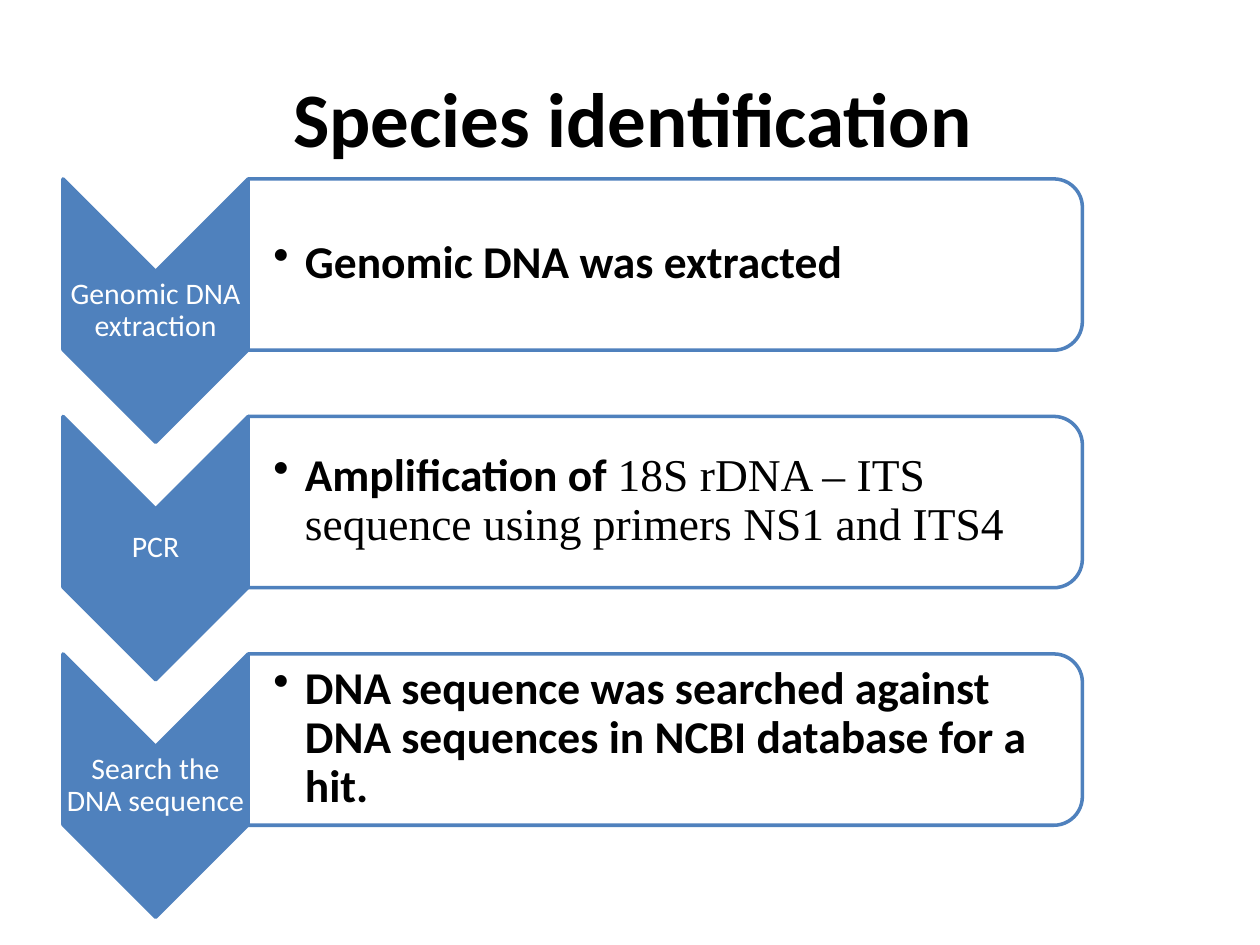
from lxml.etree import SubElement
from pptx import Presentation
from pptx.dml.color import RGBColor
from pptx.enum.shapes import MSO_SHAPE as Shape
from pptx.enum.text import MSO_ANCHOR as Anchor, PP_ALIGN as Align
from pptx.oxml.ns import qn
from pptx.util import Inches, Pt

BLUE, WHITE, BLACK = "4F81BD", "FFFFFF", "000000"
SANS, SERIF = "Calibri", "Times New Roman"

deck = Presentation()
deck.slide_width, deck.slide_height = Inches(10), Inches(7.5)
slide = deck.slides.add_slide(deck.slide_layouts[6])


def add_turned(kind, left, top, width, height, fill):
    shape = slide.shapes.add_shape(
        kind,
        Inches(left + (width - height) / 2),
        Inches(top + (height - width) / 2),
        Inches(height),
        Inches(width),
    )
    shape.rotation = 90
    shape.shadow.inherit = False
    shape.fill.solid()
    shape.fill.fore_color.rgb = RGBColor.from_string(fill)
    shape.line.color.rgb = RGBColor.from_string(BLUE)
    shape.line.width = Pt(2)
    return shape


def add_text(left, top, width, height, insets, runs, size, color, align):
    frame = slide.shapes.add_textbox(
        Inches(left), Inches(top), Inches(width), Inches(height)
    ).text_frame
    frame.word_wrap = True
    frame.vertical_anchor = Anchor.MIDDLE
    frame.margin_left = Inches(insets[0])
    frame.margin_top = frame.margin_right = frame.margin_bottom = Inches(insets[1])
    paragraph = frame.paragraphs[0]
    paragraph.alignment = align
    for words, face, bold in runs:
        run = paragraph.add_run()
        run.text = words
        run.font.name = face
        run.font.size = Pt(size)
        run.font.bold = bold
        run.font.color.rgb = RGBColor.from_string(color)
    return paragraph


add_text(0.5, 0.3, 9, 1.25, (0.1, 0.05), [("Species identification", SANS, True)],
         44, BLACK, Align.CENTER)

steps = [
    ("Genomic DNA extraction", [("Genomic DNA was extracted", SANS, True)]),
    ("PCR", [
        ("Amplification of ", SANS, True),
        ("18S rDNA – ITS sequence using primers NS1 and ITS4", SERIF, False),
    ]),
    ("Search the DNA sequence", [
        ("DNA sequence was searched against DNA sequences in NCBI database for a hit.",
         SANS, True),
    ]),
]

first_row, row_pitch = 1.42, 1.885
label_left, label_width = 0.5, 1.47
detail_left = label_left + label_width

for row, (label, detail) in enumerate(steps):
    top = first_row + row * row_pitch
    add_turned(Shape.CHEVRON, label_left, top, label_width, 2.09, BLUE)
    step_name = add_text(label_left, top + 0.73, label_width, 0.63, (0.01, 0.01),
                         [(label, SANS, False)], 17, WHITE, Align.CENTER)
    step_name.line_spacing = 0.9

    panel = add_turned(Shape.ROUND_2_SAME_RECTANGLE, detail_left, top, 6.62, 1.36, WHITE)
    panel_color = panel.fill._xPr.find(qn("a:solidFill"))[0]
    SubElement(panel_color, qn("a:alpha"), val="90000")

    bullet = add_text(detail_left, top + 0.06, 6.55, 1.23, (0.2, 0.02),
                      detail, 26, BLACK, Align.LEFT)
    bullet.line_spacing = 0.9
    properties = bullet._p.get_or_add_pPr()
    properties.set("marL", str(Inches(0.25)))
    properties.set("indent", str(-Inches(0.25)))
    SubElement(properties, qn("a:buChar"), char="•")

deck.save("out.pptx")
